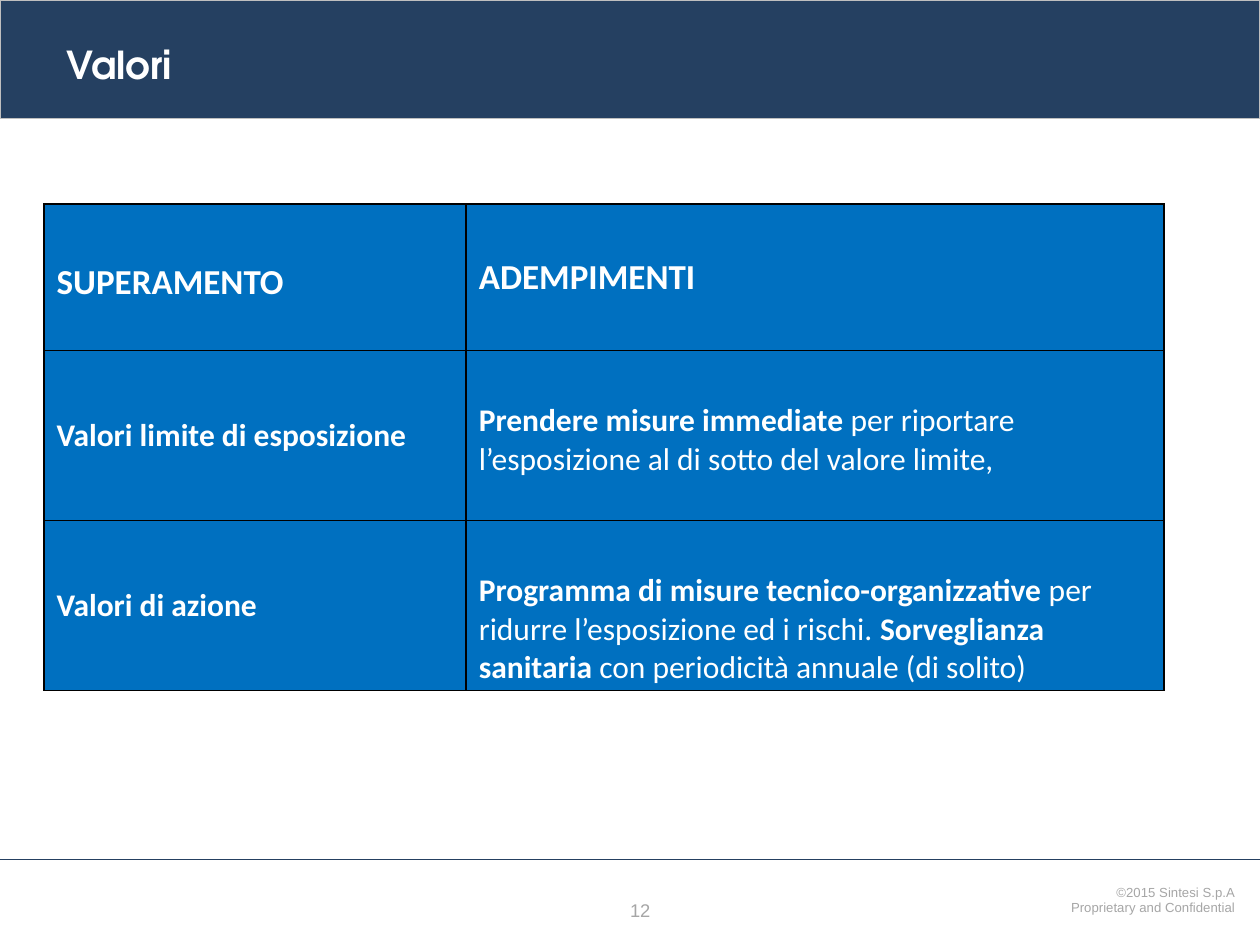
from lxml import etree
from pptx import Presentation
from pptx.dml.color import RGBColor
from pptx.enum.shapes import MSO_CONNECTOR, MSO_SHAPE
from pptx.enum.text import MSO_ANCHOR, PP_ALIGN
from pptx.oxml.ns import qn
from pptx.util import Inches, Pt

RECT, STRAIGHT = MSO_SHAPE.RECTANGLE, MSO_CONNECTOR.STRAIGHT
LEFT, RIGHT = PP_ALIGN.LEFT, PP_ALIGN.RIGHT
TOP, MIDDLE = MSO_ANCHOR.TOP, MSO_ANCHOR.MIDDLE

COLORS = {"navy": "254061", "blue": "0070C0", "white": "FFFFFF",
          "border": "000000", "edge": "BFBFBF", "muted": "A6A6A6"}


def rgb(name):
    return RGBColor.from_string(COLORS[name])


def write(tf, paragraphs, size, font="Arial", color="white", align=LEFT, spacing=None):
    """Fill a text frame; each paragraph is a list of (text, bold) runs."""
    tf.word_wrap = True
    for i, runs in enumerate(paragraphs):
        p = tf.paragraphs[0] if i == 0 else tf.add_paragraph()
        p.alignment = align
        if spacing:
            p.line_spacing = spacing
        for text, bold in runs:
            r = p.add_run()
            r.text = text
            r.font.size, r.font.name, r.font.bold = Pt(size), font, bold
            r.font.color.rgb = rgb(color)


def add_borders(cell, color, width):
    tcPr = cell._tc.get_or_add_tcPr()
    for i, side in enumerate(("lnL", "lnR", "lnT", "lnB")):
        ln = etree.Element(qn(f"a:{side}"), w=str(Pt(width)))
        fill = etree.SubElement(ln, qn("a:solidFill"))
        etree.SubElement(fill, qn("a:srgbClr"), val=COLORS[color])
        tcPr.insert(i, ln)


class SlideBuilder:
    def __init__(self, slide):
        self.s = slide

    def band(self, x, y, w, h, fill, line):
        sp = self.s.shapes.add_shape(RECT, Inches(x), Inches(y), Inches(w), Inches(h))
        sp.shadow.inherit = False
        sp.fill.solid()
        sp.fill.fore_color.rgb = rgb(fill)
        sp.line.color.rgb = rgb(line)
        sp.line.width = Pt(0.75)

    def rule(self, x1, y1, x2, y2, color, width):
        line = self.s.shapes.add_connector(STRAIGHT, Inches(x1), Inches(y1),
                                           Inches(x2), Inches(y2))
        line.line.color.rgb = rgb(color)
        line.line.width = Pt(width)
        etree.SubElement(line._element.spPr, qn("a:effectLst"))

    def text(self, x, y, w, h, paragraphs, anchor=TOP, **style):
        box = self.s.shapes.add_textbox(Inches(x), Inches(y), Inches(w), Inches(h))
        box.text_frame.vertical_anchor = anchor
        write(box.text_frame, paragraphs, **style)

    def table(self, x, y, widths, heights, rows):
        """Each cell is (runs, top margin, bottom margin); the first row is the header."""
        table = self.s.shapes.add_table(len(heights), len(widths), Inches(x), Inches(y),
                                        Inches(sum(widths)), Inches(sum(heights))).table
        for col, w in zip(table.columns, widths):
            col.width = Inches(w)
        for i, (row, h) in enumerate(zip(rows, heights)):
            table.rows[i].height = Inches(h)
            for j, (runs, top, bottom) in enumerate(row):
                cell = table.cell(i, j)
                cell.vertical_anchor = MIDDLE
                cell.margin_left = cell.margin_right = Inches(0.1)
                cell.margin_top, cell.margin_bottom = Inches(top), Inches(bottom)
                cell.fill.solid()
                cell.fill.fore_color.rgb = rgb("blue")
                add_borders(cell, "border", 1)
                write(cell.text_frame, [runs], size=18 if i else 20, font="Calibri")


def main():
    prs = Presentation()
    prs.slide_width, prs.slide_height = Inches(10), Inches(7.5)
    slide = SlideBuilder(prs.slides.add_slide(prs.slide_layouts[6]))

    slide.text(4.74, 7.09, 0.52, 0.28, [[("12", False)]],
               size=10.5, color="muted", align=RIGHT)
    slide.text(7.24, 6.98, 2.66, 0.34,
               [[("©2015 Sintesi S.p.A", False)], [("Proprietary and Confidential", False)]],
               size=7.5, color="muted", align=RIGHT, spacing=0.95)
    slide.band(0, 0, 10, 0.94, "navy", "edge")
    slide.rule(0, 6.82, 10, 6.82, "navy", 0.5)

    rows = [
        [([("SUPERAMENTO", True)], 0.13, 0.05),
         ([("ADEMPIMENTI", True)], 0.05, 0.05)],
        [([("Valori limite di esposizione", True)], 0.05, 0.05),
         ([("Prendere misure immediate", True),
           (" per riportare l’esposizione al di sotto del valore limite,", False)], 0.13, 0.05)],
        [([("Valori di azione", True)], 0.05, 0.05),
         ([("Programma di misure tecnico-organizzative", True),
           (" per ridurre l’esposizione ed i rischi. ", False),
           ("Sorveglianza sanitaria", True),
           (" con periodicità annuale (di solito)", False)], 0.4, 0.02)],
    ]
    slide.table(0.35, 1.62, [3.35, 5.54], [1.16, 1.35, 1.35], rows)
    slide.text(0.43, 0, 9.13, 1.01, [[("Valori", True)]], anchor=MIDDLE,
               size=22, font="TeX Gyre Adventor")
    prs.save("out.pptx")


if __name__ == "__main__":
    main()
